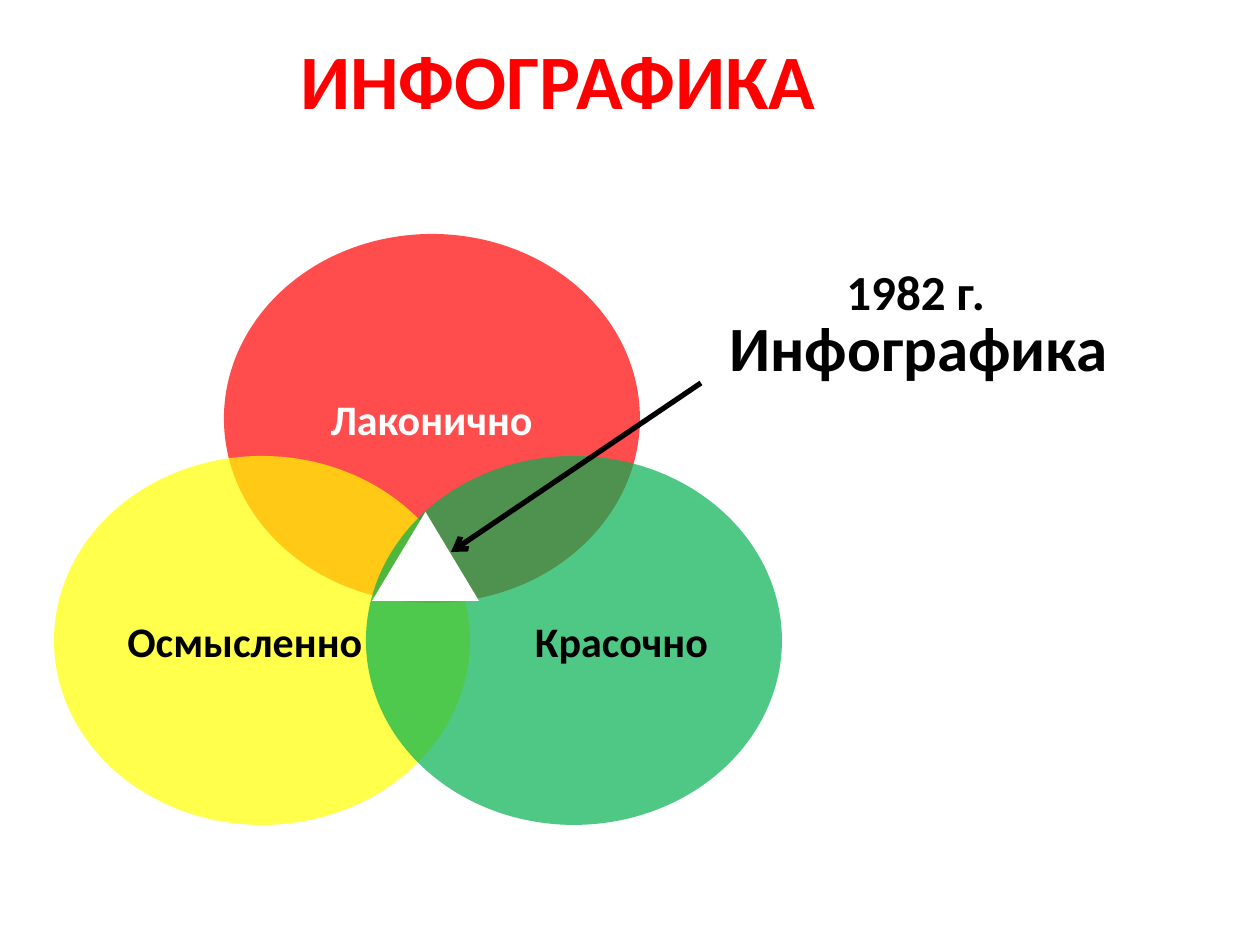
from lxml import etree
from pptx import Presentation
from pptx.dml.color import RGBColor
from pptx.enum.shapes import MSO_CONNECTOR as Connector, MSO_SHAPE as Shape
from pptx.enum.text import MSO_ANCHOR as Anchor, PP_ALIGN as Align
from pptx.oxml.ns import qn
from pptx.util import Pt

PX = 7257  # EMU in one px, 126 px to the inch
INSET = 13
CIRCLE_SIZE = (416, 369)
LOWER_TOP = 456


def px(*lengths):
    return [length * PX for length in lengths]


def color(code):
    return RGBColor.from_string(code)


def write(shape, text, size=24, ink="000000", align=Align.LEFT,
          anchor=Anchor.TOP, after=0, right_inset=INSET):
    frame = shape.text_frame
    frame.word_wrap = True
    frame.vertical_anchor = anchor
    frame.margin_right = right_inset * PX
    para = frame.paragraphs[0]
    para.alignment = align
    para.space_after = Pt(after)
    span = para.add_run()
    span.text = text
    span.font.name = "Calibri"
    span.font.size = Pt(size)
    span.font.bold = True
    span.font.color.rgb = color(ink)


def add_label(page, place, text, **style):
    write(page.shapes.add_textbox(*px(*place)), text, **style)


def add_figure(page, kind, place, fill, opacity=100):
    figure = page.shapes.add_shape(kind, *px(*place))
    figure.shadow.inherit = False
    figure.line.fill.background()
    figure.fill.solid()
    figure.fill.fore_color.rgb = color(fill)
    if opacity < 100:
        tint = figure.fill._xPr.find(qn("a:solidFill"))[0]
        etree.SubElement(tint, qn("a:alpha"), val=str(opacity * 1000))
    return figure


def add_circle(page, left, top, fill, opacity, text, **style):
    circle = add_figure(page, Shape.OVAL, (left, top, *CIRCLE_SIZE), fill, opacity)
    write(circle, text, anchor=Anchor.MIDDLE, **style)


def add_arrow(page, start, end, width):
    arrow = page.shapes.add_connector(Connector.STRAIGHT, *px(*start, *end))
    arrow.line.color.rgb = color("000000")
    arrow.line.width = Pt(width)
    etree.SubElement(arrow.line._get_or_add_ln(), qn("a:tailEnd"), type="arrow")
    etree.SubElement(arrow._element.spPr, qn("a:effectLst"))


def main():
    deck = Presentation()
    deck.slide_width, deck.slide_height = px(1260, 945)
    page = deck.slides.add_slide(deck.slide_layouts[6])

    # Three overlapping circles
    add_circle(page, 224, 234, "FF0000", 70, "Лаконично",
               ink="FFFFFF", align=Align.CENTER, after=18)
    add_circle(page, 54, LOWER_TOP, "FFFF00", 70, "Осмысленно")
    add_circle(page, 366, LOWER_TOP, "00B050", 69, "Красочно", align=Align.RIGHT)

    # Callout pointing at the shared area
    add_label(page, (717, 302, 428, 89), "Инфографика", size=36)
    add_arrow(page, (701, 383), (451, 552), 3)
    add_label(page, (740, 255, 258, 72), "1982 г.", size=28, align=Align.RIGHT)

    # Title, its centre moved left by a wider right inset
    add_label(page, (94, 26, 983, 199), "ИНФОГРАФИКА", size=44, ink="FF0000",
              align=Align.CENTER, right_inset=INSET + 54)

    # Shared area
    add_figure(page, Shape.ISOSCELES_TRIANGLE, (372, 512, 107, 89), "FFFFFF")

    deck.save("out.pptx")


if __name__ == "__main__":
    main()
